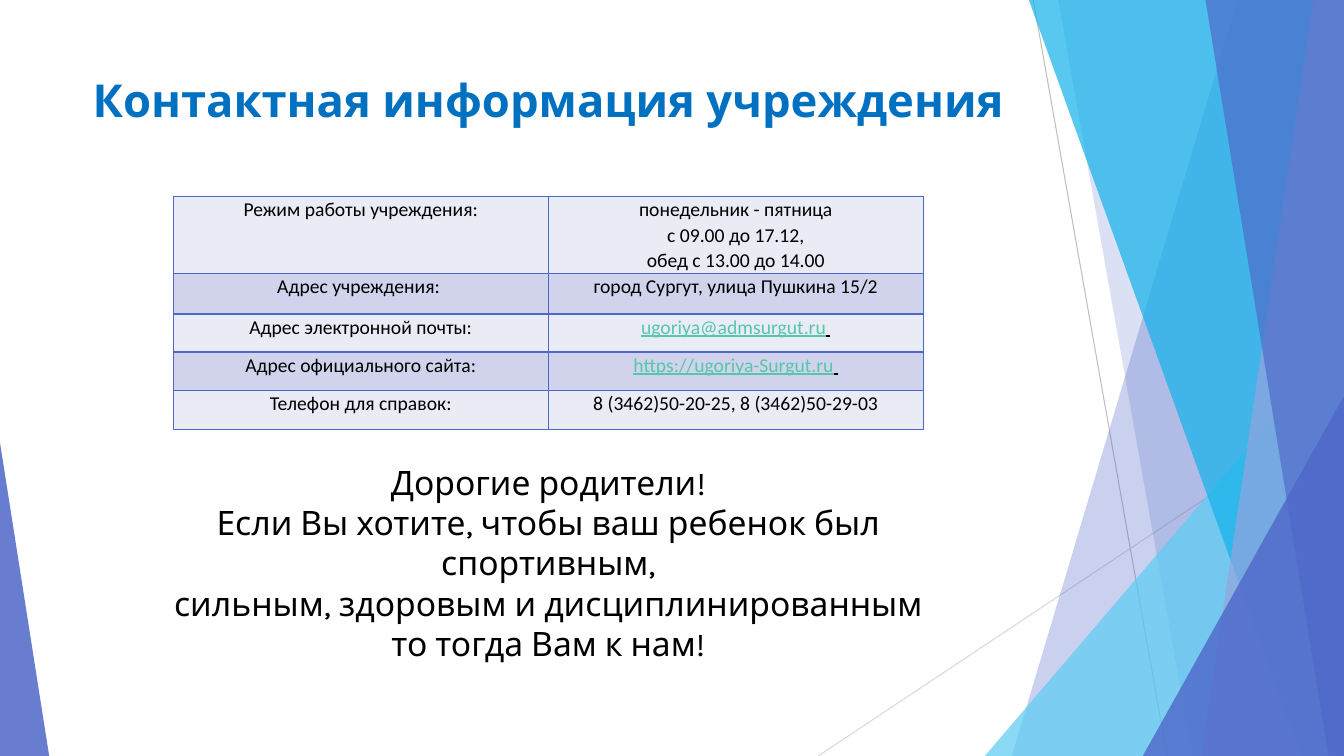
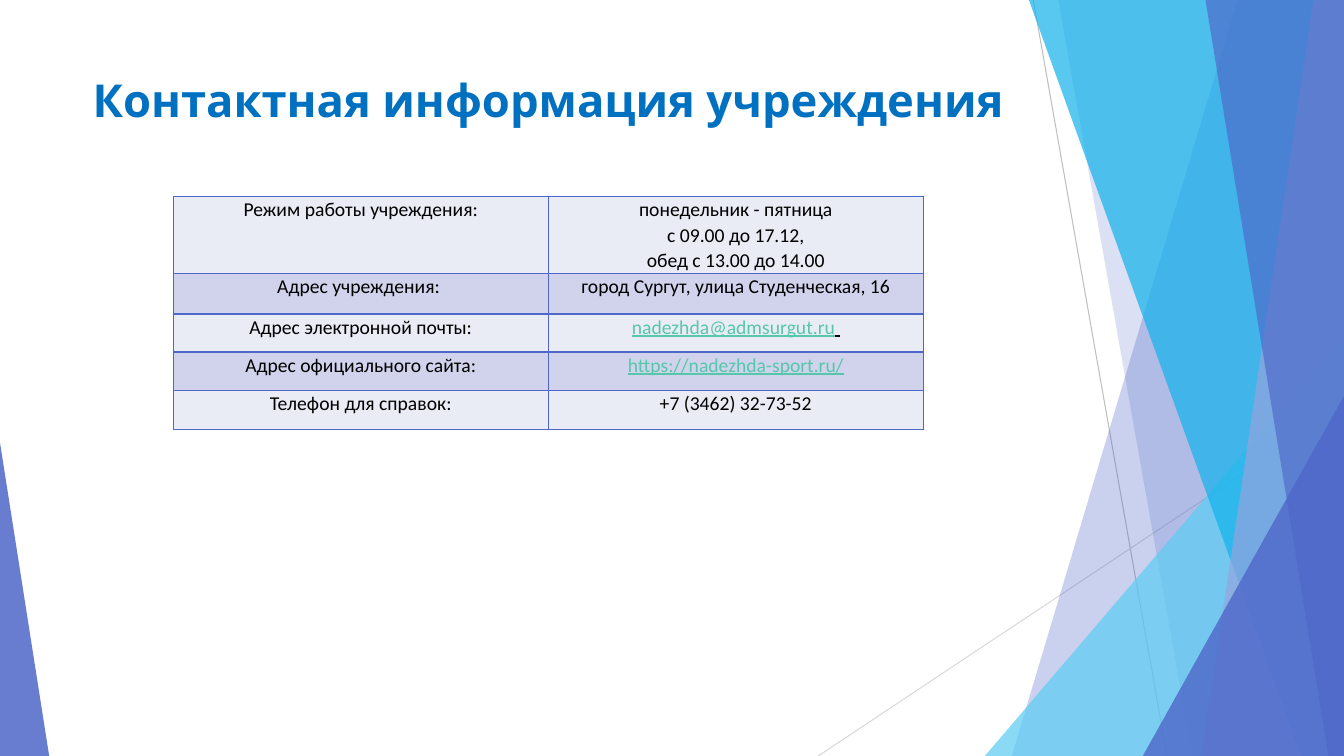
from dataclasses import dataclass

from lxml.etree import SubElement
from pptx import Presentation
from pptx.dml.color import RGBColor
from pptx.enum.shapes import MSO_CONNECTOR, MSO_SHAPE
from pptx.enum.text import MSO_ANCHOR, PP_ALIGN
from pptx.oxml.ns import qn
from pptx.util import Cm, Pt


@dataclass(frozen=True)
class Theme:
    """Colours, fonts and type sizes shared by the slides."""
    indigo: str = "4E67C8"
    lavender: str = "95A4DE"
    sky: str = "5ECCF3"
    cyan: str = "12B2EB"
    rule_dark: str = "BFBFBF"
    rule_light: str = "D9D9D9"
    title: str = "0070C0"
    text: str = "000000"
    link: str = "56C7AA"
    bands: tuple = ("E9EBF5", "D0D3EB")
    display: str = "Karla"
    body: str = "Calibri"
    title_size: float = 32.4
    message_size: float = 24
    table_size: float = 14


@dataclass(frozen=True)
class Box:
    """A region in centimetres."""
    x: float
    y: float
    w: float
    h: float

    def emu(self):
        """Return the region as lengths."""
        return Cm(self.x), Cm(self.y), Cm(self.w), Cm(self.h)


T = Theme()
PAGE = Box(0, 0, 33.87, 19.05)
TITLE = Box(1.88, 1.7, 23.88, 3.66)
TABLE = Box(4.37, 4.95, 18.9, 5.87)
MESSAGE = Box(2.44, 11.51, 22.76, 5.13)
ROW_HEIGHTS = (1.94, 1.02, 0.96, 0.97, 0.98)
LABELS = ("Режим работы учреждения:", "Адрес учреждения: ", "Адрес электронной почты:",
          "Адрес официального сайта:", "Телефон для справок:")
HOURS = ("понедельник - пятница", "с 09.00 до 17.12,", "обед с 13.00 до 14.00")
LINK_ROWS = (2, 3)
HEADING = "Контактная информация учреждения"
SLIDES = (
    dict(contacts=("город Сургут, улица Пушкина 15/2", "ugoriya@admsurgut.ru ",
                   "https://ugoriya-Surgut.ru ", "8 (3462)50-20-25, 8 (3462)50-29-03"),
         message=("Дорогие родители!", "Если Вы хотите, чтобы ваш ребенок был спортивным,",
                  "сильным, здоровым и дисциплинированным", "то тогда Вам к нам!")),
    dict(contacts=("город Сургут, улица Студенческая, 16", "nadezhda@admsurgut.ru ",
                   "https://nadezhda-sport.ru/", "+7 (3462) 32-73-52"),
         message=()),
)


def add_run(p, text, color, **formats):
    """Add a run with the given colour and font attributes."""
    r = p.add_run()
    r.text = text
    r.font.color.rgb = RGBColor.from_string(color)
    for name, value in formats.items():
        setattr(r.font, name, value)


def add_paragraphs(tf, lines, color, spacing=None, **formats):
    """Fill a text frame with centred paragraphs."""
    for i, line in enumerate(lines):
        p = tf.add_paragraph() if i else tf.paragraphs[0]
        p.alignment = PP_ALIGN.CENTER
        if spacing:
            p.line_spacing = spacing
        if line:
            add_run(p, line, color, **formats)


def add_text(slide, box, lines, color, **formats):
    """Place a wrapping, top-anchored text box."""
    tf = slide.shapes.add_textbox(*box.emu()).text_frame
    tf.word_wrap = True
    tf.vertical_anchor = MSO_ANCHOR.TOP
    add_paragraphs(tf, lines, color, **formats)


def paint(sp, color, alpha):
    """Give a shape a translucent fill without line or shadow."""
    sp.shadow.inherit = False
    sp.line.fill.background()
    sp.fill.solid()
    sp.fill.fore_color.rgb = RGBColor.from_string(color)
    clr = sp.fill._xPr.find(qn("a:solidFill"))[0]
    SubElement(clr, qn("a:alpha"), val=str(alpha * 1000))


def add_rule(slide, box, start, end, color):
    """Draw a thin line between two points of the box."""
    x1, y1, x2, y2 = (Cm(v) for v in (box.x + start[0], box.y + start[1],
                                      box.x + end[0], box.y + end[1]))
    cn = slide.shapes.add_connector(MSO_CONNECTOR.STRAIGHT, x1, y1, x2, y2)
    cn.line.color.rgb = RGBColor.from_string(color)
    cn.line.width = Pt(0.75)
    SubElement(cn._element.spPr, qn("a:effectLst"))


def add_facet(slide, box, top, bottom, color, alpha):
    """Draw a full-height facet from a slanted edge to the right side."""
    right, foot = box.x + box.w, box.y + box.h
    points = [(Cm(x), Cm(y)) for x, y in ((box.x + top, box.y), (right, box.y),
                                          (right, foot), (box.x + bottom, foot))]
    fb = slide.shapes.build_freeform(*points[0])
    fb.add_line_segments(points[1:], close=True)
    paint(fb.convert_to_shape(), color, alpha)


def add_corner(slide, box, w, h, on_right, color, alpha):
    """Draw a right triangle in a lower corner of the box."""
    x = box.x + (box.w - w if on_right else 0)
    corner = Box(x, box.y + box.h - h, w, h)
    sp = slide.shapes.add_shape(MSO_SHAPE.ISOSCELES_TRIANGLE, *corner.emu())
    sp.adjustments[0] = 1 if on_right else 0
    paint(sp, color, alpha)


def add_backdrop(slide, box):
    """Draw the faceted decoration of the page."""
    add_rule(slide, box, (26.04, 0), (29.41, box.h), T.rule_dark)
    add_rule(slide, box, (box.w, 10.24), (20.62, box.h), T.rule_light)
    add_facet(slide, box, 31.19, 25.5, T.indigo, 30)
    add_facet(slide, box, 26.67, 30.05, T.indigo, 20)
    add_corner(slide, box, 9.05, 10.59, True, T.sky, 72)
    add_facet(slide, box, 25.93, 32.79, T.cyan, 70)
    add_facet(slide, box, 33.1, 30.28, T.lavender, 70)
    add_facet(slide, box, 30.38, 33.48, T.indigo, 65)
    add_corner(slide, box, 5.07, 9.07, True, T.indigo, 80)
    add_corner(slide, box, 1.24, 7.9, False, T.indigo, 85)


def style_cell(cell, fill):
    """Set the margins, borders and fill of a cell."""
    margins = dict(margin_left=Cm(0.19), margin_right=Cm(0.19), margin_top=0, margin_bottom=0)
    for name, value in margins.items():
        setattr(cell, name, value)
    tcPr = cell._tc.get_or_add_tcPr()
    for side in ("a:lnL", "a:lnR", "a:lnT", "a:lnB"):
        ln = SubElement(tcPr, qn(side), w=str(Pt(1)))
        SubElement(SubElement(ln, qn("a:solidFill")), qn("a:srgbClr"), val=T.indigo)
    cell.fill.solid()
    cell.fill.fore_color.rgb = RGBColor.from_string(fill)


def add_contacts(slide, box, contacts):
    """Place the two-column table of contact details."""
    values = (HOURS, *((c,) for c in contacts))
    tbl = slide.shapes.add_table(len(LABELS), 2, *box.emu()).table
    tbl.first_row = tbl.horz_banding = False
    for col in tbl.columns:
        col.width = Cm(box.w / 2)
    formats = dict(name=T.body, size=Pt(T.table_size))
    for i, (label, lines) in enumerate(zip(LABELS, values)):
        tbl.rows[i].height = Cm(ROW_HEIGHTS[i])
        for j, texts in enumerate(((label,), lines)):
            cell = tbl.cell(i, j)
            style_cell(cell, T.bands[i % 2])
            if j and i in LINK_ROWS:
                link = texts[0].rstrip()
                add_paragraphs(cell.text_frame, (link,), T.link, 1.07, underline=True, **formats)
                if link != texts[0]:
                    add_run(cell.text_frame.paragraphs[0], " ", T.text, underline=True, **formats)
            else:
                add_paragraphs(cell.text_frame, texts, T.text, 1.07, **formats)


def add_contact_slide(prs, contacts, message):
    """Build one contact slide with an optional message."""
    slide = prs.slides.add_slide(prs.slide_layouts[6])
    add_backdrop(slide, PAGE)
    add_text(slide, TITLE, (HEADING,), T.title, name=T.display, size=Pt(T.title_size), bold=True)
    add_contacts(slide, TABLE, contacts)
    if message:
        add_text(slide, MESSAGE, message, T.text, name=T.display, size=Pt(T.message_size))


def main():
    """Build and save the presentation."""
    prs = Presentation()
    prs.slide_width, prs.slide_height = Cm(PAGE.w), Cm(PAGE.h)
    for content in SLIDES:
        add_contact_slide(prs, **content)
    prs.save("out.pptx")


if __name__ == "__main__":
    main()
